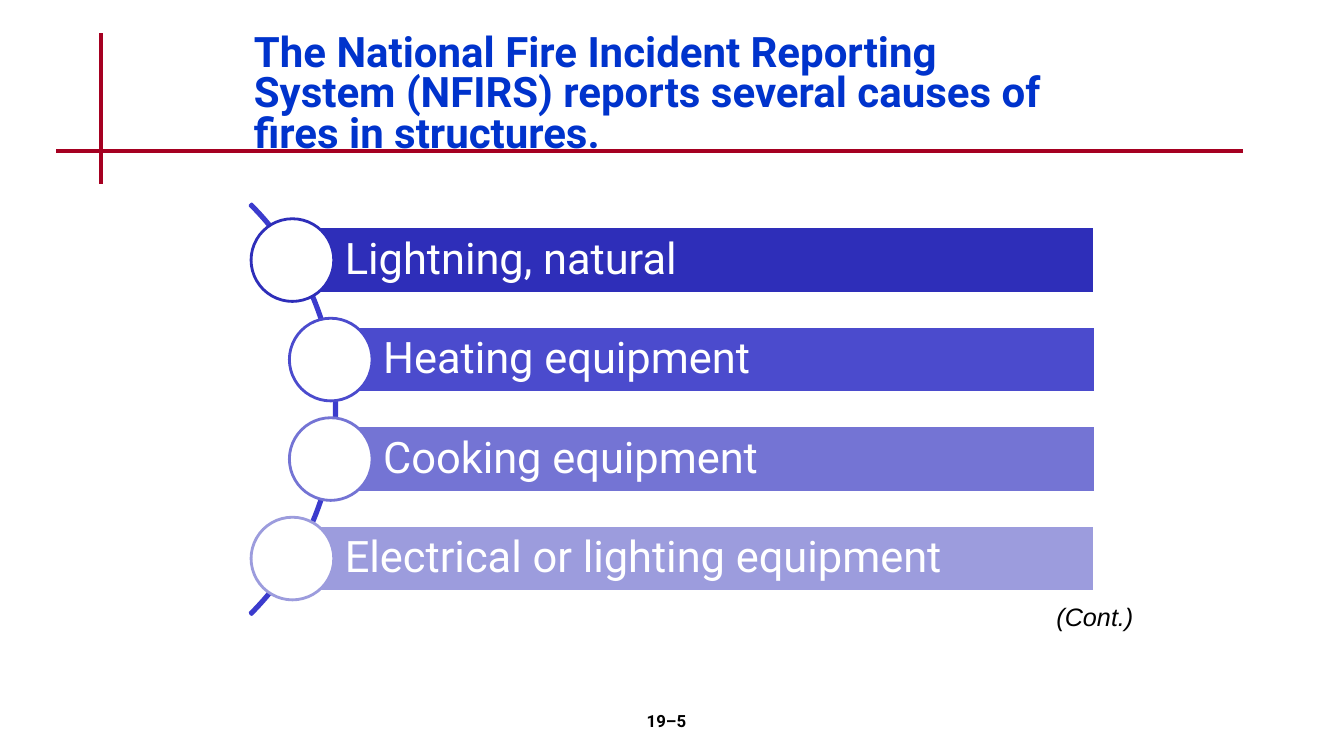
from lxml import etree
from pptx import Presentation, util as u
from pptx.dml.color import RGBColor
from pptx.enum import shapes, text
from pptx.oxml.ns import qn

WIDE, HIGH = u.Inches(13.33), u.Inches(7.5)
WHITE = RGBColor(0xFF, 0xFF, 0xFF)
BLACK = RGBColor(0, 0, 0)
RED = RGBColor(0xA5, 0x00, 0x21)
BLUE = RGBColor(0x00, 0x33, 0xCC)
ARC = RGBColor(0x3B, 0x3B, 0xCD)
CAUSES = [
    ("Lightning, natural", RGBColor(0x2E, 0x2E, 0xB9)),
    ("Heating equipment", RGBColor(0x4B, 0x4B, 0xCD)),
    ("Cooking equipment", RGBColor(0x74, 0x74, 0xD4)),
    ("Electrical or lighting equipment", RGBColor(0x9C, 0x9C, 0xDD)),
]

# Row grid of the list, in inches
TOP, PITCH = 2.58, 0.987    # centre of first row, row step
LEFT, RIGHT = 2.9, 10.86    # outer bar edges
STEP = 0.38                 # indent of the middle rows
BAR, DOT = 0.66, 0.82       # bar height, circle size
RADIUS = 2.88               # arc behind the circles


def style(para, size, color, font="Roboto", bold=False, italic=False):
    face = para.font
    face.name, face.size, face.color.rgb = font, u.Pt(size), color
    face.bold, face.italic = bold, italic


def rule(slide, x1, y1, x2, y2):
    """Straight red line; ends are given as shares of the slide."""
    line = slide.shapes.add_connector(
        shapes.MSO_CONNECTOR.STRAIGHT, round(x1 * WIDE), round(y1 * HIGH),
        round(x2 * WIDE), round(y2 * HIGH))
    line.line.color.rgb, line.line.width = RED, u.Pt(3)
    etree.SubElement(line._element.spPr, qn("a:effectLst"))


def label(slide, box, words, align=text.PP_ALIGN.LEFT, space=1.0, **look):
    frame = slide.shapes.add_textbox(*map(u.Inches, box)).text_frame
    frame.word_wrap = True
    para = frame.paragraphs[0]
    para.text, para.alignment, para.line_spacing = words, align, space
    style(para, **look)


def solid(slide, kind, box, fill, edge):
    shape = slide.shapes.add_shape(kind, *map(u.Inches, box))
    shape.shadow.inherit = False
    if fill is None:
        shape.fill.background()
    else:
        shape.fill.solid()
        shape.fill.fore_color.rgb = fill
    shape.line.color.rgb, shape.line.width = edge, u.Pt(2)
    return shape


def arc(slide):
    mid = TOP + PITCH * (len(CAUSES) - 1) / 2
    shape = solid(slide, shapes.MSO_SHAPE.BLOCK_ARC,
                  (0.46 - RADIUS, mid - RADIUS, 2 * RADIUS, 2 * RADIUS),
                  None, ARC)
    for i, value in enumerate((189, 27, 0.004)):
        shape.adjustments[i] = value


def cause(slide, row, words, color):
    """One bar with its circle; middle rows sit one step to the right."""
    left = LEFT + (STEP if 0 < row < len(CAUSES) - 1 else 0)
    mid = TOP + row * PITCH
    bar = solid(slide, shapes.MSO_SHAPE.RECTANGLE,
                (left, mid - BAR / 2, RIGHT - left, BAR), color, WHITE)
    frame = bar.text_frame
    frame.word_wrap = True
    frame.vertical_anchor = text.MSO_ANCHOR.MIDDLE
    frame.margin_left = u.Inches(0.52)
    frame.margin_right = frame.margin_top = frame.margin_bottom = u.Inches(0.09)
    para = frame.paragraphs[0]
    para.text, para.alignment = words, text.PP_ALIGN.LEFT
    para.line_spacing = 0.9
    style(para, 31, WHITE)
    solid(slide, shapes.MSO_SHAPE.OVAL,
          (left - DOT / 2, mid - DOT / 2, DOT, DOT), WHITE, color)


def main():
    deck = Presentation()
    deck.slide_width, deck.slide_height = WIDE, HIGH
    slide = deck.slides.add_slide(deck.slide_layouts[6])

    # Crossed rules and title
    rule(slide, 0.075, 0.044, 0.075, 0.244)
    rule(slide, 0.042, 0.2, 0.925, 0.2)
    label(slide, (2.42, 0.3, 8.45, 1),
          "The National Fire Incident Reporting System (NFIRS) reports "
          "several causes of fires in structures.",
          space=0.8, size=30, color=BLUE, bold=True)

    # Page number
    label(slide, (5.22, 7, 2.78, 0.5), "19–5", text.PP_ALIGN.CENTER,
          size=12, color=BLACK, bold=True)

    # List of causes along the arc
    arc(slide)
    for row, (words, color) in enumerate(CAUSES):
        cause(slide, row, words, color)

    # Continuation mark
    label(slide, (9.67, 5.92, 1.67, 0.4), "(Cont.)", text.PP_ALIGN.RIGHT,
          size=18, color=BLACK, font="Arial", italic=True)

    deck.save("out.pptx")


if __name__ == "__main__":
    main()
